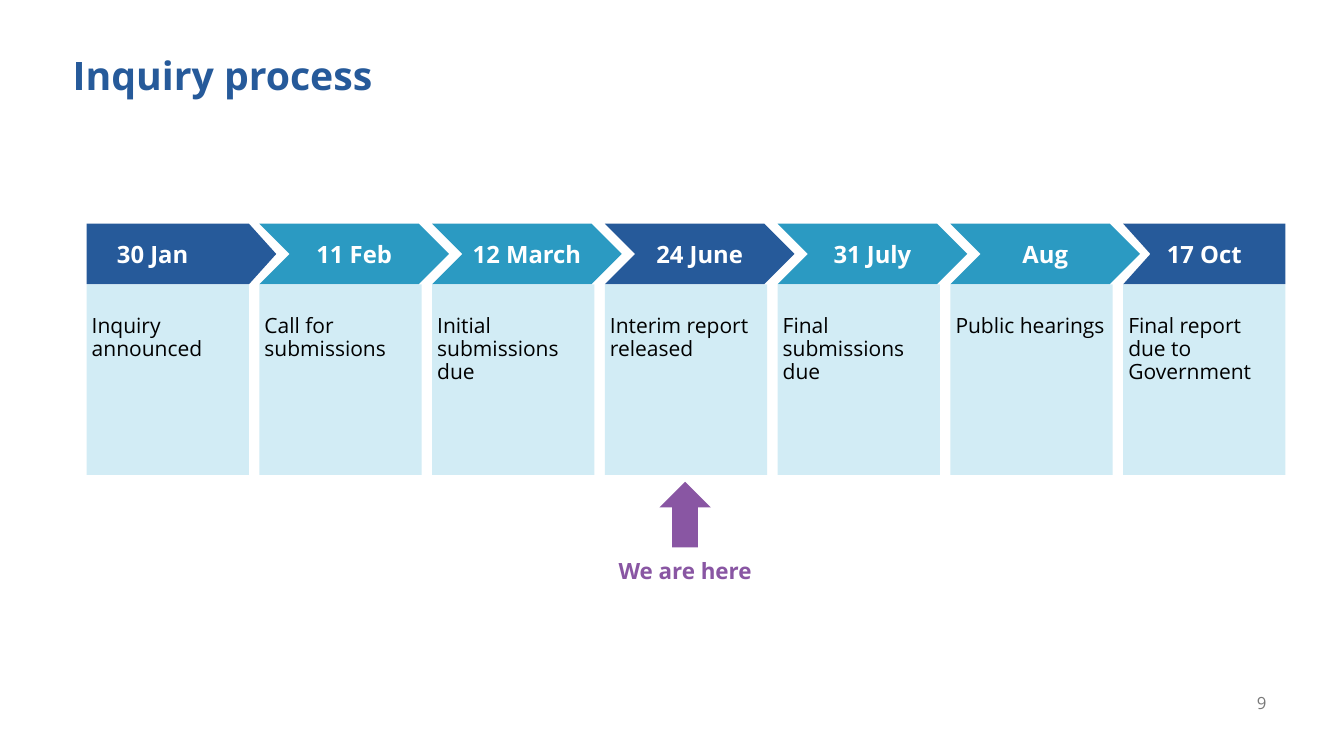
import pptx
import pptx.dml.color
import pptx.enum.shapes
import pptx.enum.text
import pptx.util

Inches = pptx.util.Inches
Pt = pptx.util.Pt
RGBColor = pptx.dml.color.RGBColor
Shape = pptx.enum.shapes.MSO_SHAPE
Align = pptx.enum.text.PP_ALIGN
Anchor = pptx.enum.text.MSO_ANCHOR

NAVY = RGBColor(0x26, 0x5A, 0x9A)
TEAL = RGBColor(0x2B, 0x9A, 0xC2)
PALE = RGBColor(0xD2, 0xEC, 0xF5)
PURPLE = RGBColor(0x89, 0x56, 0xA3)
GREY = RGBColor(0x79, 0x79, 0x79)
WHITE = RGBColor(0xFF, 0xFF, 0xFF)
BLACK = RGBColor(0x00, 0x00, 0x00)

STEPS = [
    ("30 Jan", "Inquiry announced", NAVY),
    ("11 Feb", "Call for submissions", TEAL),
    ("12 March", "Initial submissions due", TEAL),
    ("24 June", "Interim report released", NAVY),
    ("31 July", "Final submissions due", TEAL),
    ("Aug", "Public hearings", TEAL),
    ("17 Oct", "Final report due to Government", NAVY),
]
FIRST_LEFT, LAST_LEFT = 0.86, 11.14
PITCH = (LAST_LEFT - FIRST_LEFT) / (len(STEPS) - 1)
CARD_WIDTH, CARD_HEIGHT = 1.61, 1.89
HEADER_TOP, HEADER_WIDTH, HEADER_HEIGHT = 2.22, 1.88, 0.6
POINT_DEPTH = HEADER_WIDTH - CARD_WIDTH


class TimelineSlide:
    """Hold the text style and the current slide, and draw each kind of element."""

    font_name = "Open Sans"

    def __init__(self, presentation):
        self.slide = presentation.slides.add_slide(presentation.slide_layouts[5])

    def set_text(self, shape, text, size, color, bold=False, align=Align.LEFT,
                 anchor=Anchor.TOP, insets=(0.1, 0.05, 0.1, 0.05), spacing=0.9):
        frame = shape.text_frame
        frame.text = text
        paragraph = frame.paragraphs[0]
        sides = ("margin_left", "margin_top", "margin_right", "margin_bottom")
        frame_format = dict(zip(sides, map(Inches, insets)))
        frame_format.update(word_wrap=True, vertical_anchor=anchor,
                            auto_size=pptx.enum.text.MSO_AUTO_SIZE.NONE)
        formats = (
            (frame, frame_format),
            (paragraph, {"alignment": align, "line_spacing": spacing}),
            (paragraph.font, {"name": self.font_name, "size": Pt(size), "bold": bold}),
        )
        for target, values in formats:
            for name, value in values.items():
                setattr(target, name, value)
        paragraph.font.color.rgb = color

    def paint(self, shape, color):
        shape.shadow.inherit = False
        shape.fill.solid()
        shape.fill.fore_color.rgb = color
        shape.line.fill.background()
        return shape

    def title(self, text, left, top, width, height):
        title = self.slide.shapes.title
        box = {"left": left, "top": top, "width": width, "height": height}
        for name, value in box.items():
            setattr(title, name, Inches(value))
        self.set_text(title, text, 28, NAVY, bold=True, insets=(0.1, 0, 0.1, 0))

    def text_box(self, text, left, top, width, height, size, color, **style):
        box = self.slide.shapes.add_textbox(*map(Inches, (left, top, width, height)))
        self.set_text(box, text, size, color, **style)

    def preset(self, kind, left, top, width, height, color):
        shape = self.slide.shapes.add_shape(kind, *map(Inches, (left, top, width, height)))
        return self.paint(shape, color)

    def outline(self, points, color):
        start, *others = [(Inches(x), Inches(y)) for x, y in points]
        builder = self.slide.shapes.build_freeform(*start)
        builder.add_line_segments(others, close=True)
        return self.paint(builder.convert_to_shape(), color)

    def card(self, text, left):
        card = self.preset(Shape.RECTANGLE, left, HEADER_TOP + HEADER_HEIGHT,
                           CARD_WIDTH, CARD_HEIGHT, PALE)
        self.set_text(card, text, 15, BLACK, insets=(0.05, 0.31, 0.05, 0.05))

    def header(self, index, text, left, color):
        right = left + CARD_WIDTH
        middle = HEADER_TOP + HEADER_HEIGHT / 2
        bottom = HEADER_TOP + HEADER_HEIGHT
        align, left_inset = Align.CENTER, 0.06
        if index == 0:
            align, left_inset = Align.LEFT, 0.3
            shape = self.outline([(left, HEADER_TOP), (right, HEADER_TOP),
                                  (right + POINT_DEPTH, middle),
                                  (right, bottom), (left, bottom)], color)
        elif index == len(STEPS) - 1:
            shape = self.outline([(left, HEADER_TOP), (right, HEADER_TOP),
                                  (right, bottom), (left, bottom),
                                  (left + POINT_DEPTH, middle)], color)
        else:
            shape = self.preset(Shape.CHEVRON, left, HEADER_TOP,
                                HEADER_WIDTH, HEADER_HEIGHT, color)
        self.set_text(shape, text, 17, WHITE, bold=True, align=align, anchor=Anchor.MIDDLE,
                      insets=(left_inset, 0.05, 0.06, 0.05), spacing=1.0)


def main():
    presentation = pptx.Presentation()
    presentation.slide_width = Inches(13.33)
    presentation.slide_height = Inches(7.5)
    timeline = TimelineSlide(presentation)
    timeline.title("Inquiry process", 0.62, 0.56, 12.12, 0.56)
    for index, (date, stage, color) in enumerate(STEPS):
        left = FIRST_LEFT + index * PITCH
        timeline.card(stage, left)
        timeline.header(index, date, left, color)
    timeline.preset(Shape.UP_ARROW, 6.54, 4.78, 0.51, 0.65, PURPLE)
    timeline.text_box("We are here", 6.02, 5.51, 1.55, 0.42, 16, PURPLE,
                      bold=True, align=Align.CENTER)
    timeline.text_box("9", 11.75, 6.78, 0.91, 0.4, 12, GREY,
                      align=Align.RIGHT, anchor=Anchor.MIDDLE)
    presentation.save("out.pptx")


if __name__ == "__main__":
    main()
